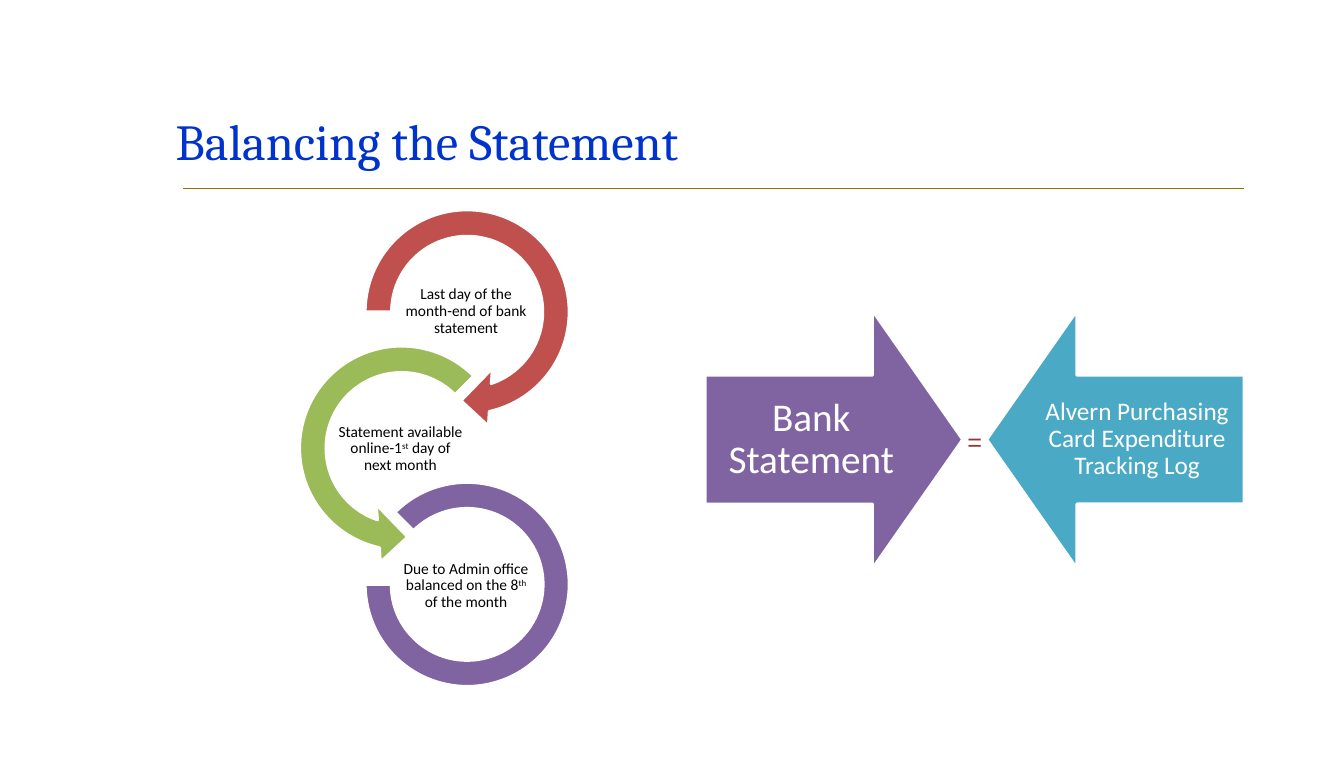
from math import cos, radians, sin, tan

from lxml import etree
from pptx import Presentation
from pptx.dml.color import RGBColor
from pptx.enum import shapes, text
from pptx.oxml.ns import qn
from pptx.util import Inches, Pt

COLORS = {
    "title": "0033CC", "rule": "986E06", "red": "BF504D", "green": "9BBB59",
    "purple": "8064A2", "teal": "4AA9C5", "equals": "953734",
    "white": "FFFFFF", "black": "000000",
}
OUTER, INNER = 1.01, 0.75
FRAME = 2.35
# Arrowhead corners, relative to the ring centre
HEAD = [(0.21, 1.13), (-0.06, 0.88), (0.25, 0.56)]


def on_circle(radius, degrees):
    return radius * cos(radians(degrees)), radius * sin(radians(degrees))


def arc_curves(radius, start, end, count):
    """Return an arc as Bezier curves of two control points and an end."""
    step = (end - start) / count
    pull = 4 / 3 * tan(radians(step / 4))
    curves = []
    for i in range(count):
        x1, y1 = on_circle(radius, start + step * i)
        x2, y2 = on_circle(radius, start + step * (i + 1))
        curves.append([(x1 - pull * y1, y1 + pull * x1),
                       (x2 + pull * y2, y2 - pull * x2), (x2, y2)])
    return curves


class SlideBuilder:
    def __init__(self, slide):
        self.slide = slide

    def color(self, name):
        return RGBColor.from_string(COLORS[name])

    def style(self, shape, fill):
        shape.shadow.inherit = False
        shape.fill.solid()
        shape.fill.fore_color.rgb = self.color(fill)
        shape.line.color.rgb = self.color("white")
        shape.line.width = Pt(2)

    def rule(self, left, right, top):
        line = self.slide.shapes.add_connector(
            shapes.MSO_CONNECTOR.STRAIGHT,
            Inches(left), Inches(top), Inches(right), Inches(top))
        line.line.color.rgb = self.color("rule")
        line.line.width = Pt(1)
        etree.SubElement(line._element.spPr, qn("a:effectLst"))

    def text(self, box, runs, size, color, font="Calibri", insets=(0, 0),
             centered=True, middle=True, spacing=0.9):
        """Add text; every second run is superscript."""
        shape = self.slide.shapes.add_textbox(*map(Inches, box))
        frame = shape.text_frame
        frame.word_wrap = True
        frame.margin_left = frame.margin_right = Inches(insets[0])
        frame.margin_top = frame.margin_bottom = Inches(insets[1])
        if middle:
            frame.vertical_anchor = text.MSO_ANCHOR.MIDDLE
        else:
            frame.auto_size = text.MSO_AUTO_SIZE.SHAPE_TO_FIT_TEXT
        paragraph = frame.paragraphs[0]
        paragraph.alignment = text.PP_ALIGN.CENTER if centered else text.PP_ALIGN.LEFT
        paragraph.line_spacing = spacing
        paragraph.font.name = font
        paragraph.font.size = Pt(size)
        paragraph.font.color.rgb = self.color(color)
        for index, words in enumerate(runs):
            run = paragraph.add_run()
            run.text = words
            if index % 2:
                run.font._element.set("baseline", "30000")

    def preset(self, kind, box, fill, adjustments, rotation=0):
        shape = self.slide.shapes.add_shape(kind, *map(Inches, box))
        for index, value in enumerate(adjustments):
            shape.adjustments[index] = value
        shape.rotation = rotation
        self.style(shape, fill)

    def ring_arrow(self, x, y, fill, start, curves, side):
        """Draw a curved arrow; side -1 mirrors it left to right."""
        left, top, size = Inches(x - FRAME / 2), Inches(y - FRAME / 2), Inches(FRAME)
        builder = self.slide.shapes.build_freeform(left, top)
        builder.add_line_segments([(left + size, top), (left + size, top + size),
                                   (left, top + size)])
        shape = builder.convert_to_shape()
        outline = next(shape._element.iter(qn("a:path")))
        for step in list(outline):
            outline.remove(step)

        def draw(tag, points=()):
            step = etree.SubElement(outline, qn(tag))
            for dx, dy in points:
                point = etree.SubElement(step, qn("a:pt"))
                point.set("x", str(Inches(FRAME / 2 + side * dx)))
                point.set("y", str(Inches(FRAME / 2 + dy)))

        draw("a:moveTo", [on_circle(OUTER, start)])
        for curve in arc_curves(OUTER, start, 437.5, curves):
            draw("a:cubicBezTo", curve)
        for corner in HEAD + [on_circle(INNER, 431.5)]:
            draw("a:lnTo", [corner])
        for curve in arc_curves(INNER, 431.5, start, curves):
            draw("a:cubicBezTo", curve)
        draw("a:close")
        self.style(shape, fill)

    def ring_label(self, x, y, runs):
        self.text((x, y, 1.3, 0.65), runs, 11, "black", insets=(0.01, 0.01))


def main():
    presentation = Presentation()
    presentation.slide_width = Inches(13.32)
    presentation.slide_height = Inches(7.5)
    builder = SlideBuilder(presentation.slides.add_slide(presentation.slide_layouts[6]))

    # Title and rule
    builder.rule(1.81, 12.33, 1.87)
    builder.text((1.74, 1.09, 10.58, 0.61), ["Balancing the Statement"], 36, "title",
                 font="Cambria", centered=False, middle=False, spacing=1)

    # Chain of rings: two curved arrows, then an open ring
    right, left = 4.63, 3.98
    top, middle, bottom = (3.09 + 1.35 * i for i in range(3))
    labels = [
        (3.97, ["Last day of the month-end of bank statement"]),
        (3.32, ["Statement available online-1", "st", " day of next month"]),
        (3.97, ["Due to Admin office balanced on the 8", "th", " of the month"]),
    ]
    builder.ring_arrow(right, top, "red", 180, 4, 1)
    builder.ring_arrow(left, middle, "green", 225, 4, -1)
    builder.preset(shapes.MSO_SHAPE.BLOCK_ARC,
                   (right - OUTER, bottom - OUTER, 2 * OUTER, 2 * OUTER),
                   "purple", (135, 108, 0.127))
    for row, (x, runs) in enumerate(labels):
        builder.ring_label(x, 2.76 + 1.36 * row, runs)

    # Facing arrows
    arrows = [
        (6.99, 270, "purple", 6.99, "Bank Statement", 28, 0.22),
        (9.78, 90, "teal", 10.22,
         "Alvern Purchasing Card Expenditure Tracking Log", 18, 0.14),
    ]
    for x, rotation, fill, label_x, words, size, inset in arrows:
        builder.preset(shapes.MSO_SHAPE.DOWN_ARROW, (x, 3.08, 2.55, 2.55), fill,
                       (0.5, 0.35), rotation)
        builder.text((label_x, 3.72, 2.1, 1.27), [words], size, "white",
                     insets=(inset, inset))

    # Equals sign
    builder.text((9.41, 4.17, 0.5, 0.4), ["="], 18, "equals", font="Arial",
                 insets=(0.1, 0.05), middle=False, spacing=1)

    presentation.save("out.pptx")


if __name__ == "__main__":
    main()
